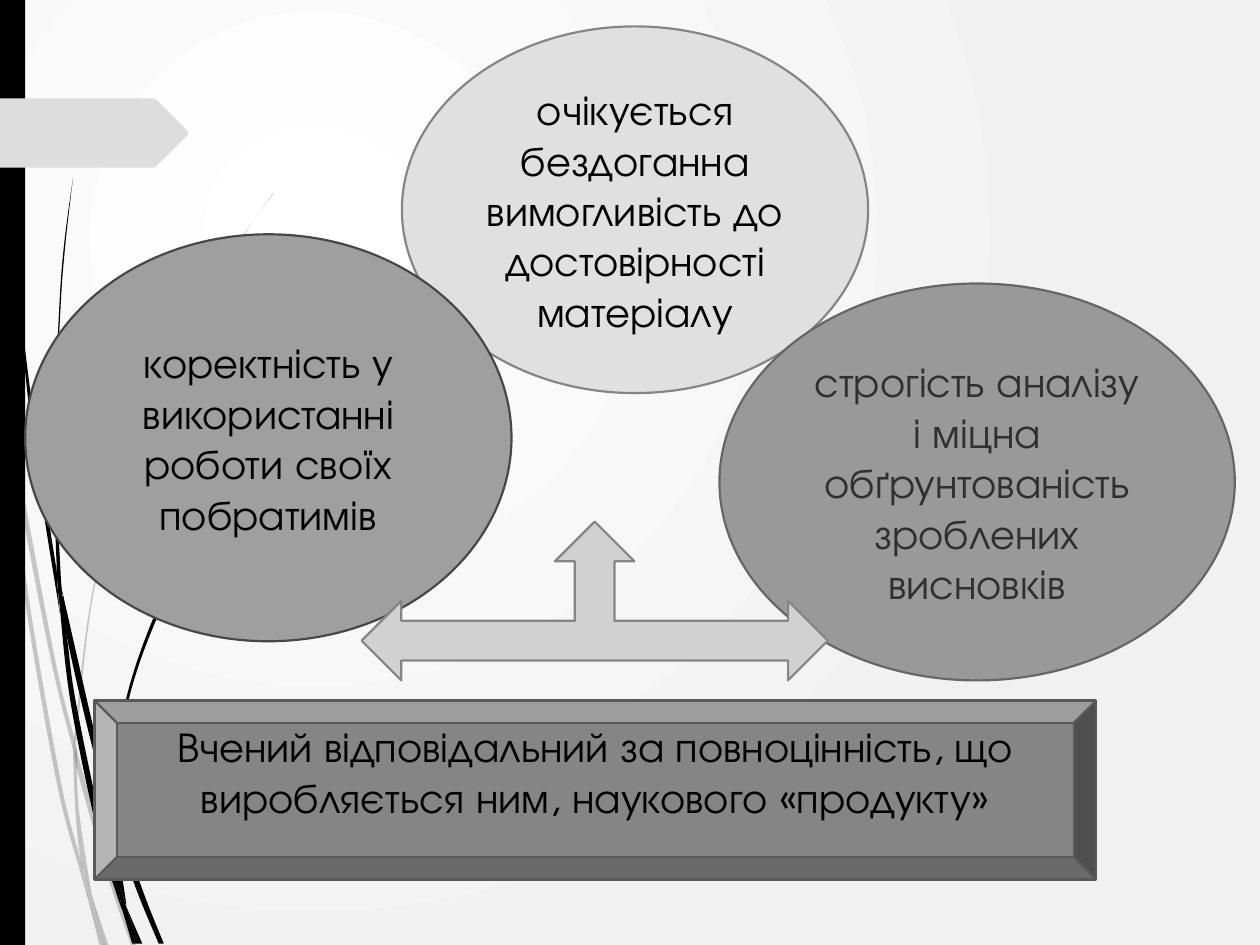
import pptx
import pptx.dml.color
import pptx.enum.shapes
import pptx.enum.text
import pptx.oxml
import pptx.util

Inches = pptx.util.Inches
SHAPES = pptx.enum.shapes.MSO_SHAPE
NS = 'xmlns:a="http://schemas.openxmlformats.org/drawingml/2006/main"'
FONT = "TeX Gyre Adventor"

# Each strand of grass has two edges: one drawn onward, the other back to the start.
PALE_STRANDS = [
    ([(0.08, 3.5), (0.06, 3.22), (0, 2.82)], [(0, 2.99), (0.07, 3.44), (0.08, 3.5)]),
    ([(0.1, 3.45), (0.12, 3.76), (0.4, 5.22), (0.59, 5.99)],
     [(0.59, 5.86), (0.43, 5.2), (0.1, 3.45)]),
    ([(0.61, 5.96), (0.61, 6.1), (0.85, 6.94), (1.04, 7.5)],
     [(1.08, 7.5), (0.88, 6.92), (0.64, 6.07), (0.61, 5.96)]),
    ([(0.73, 7.11), (0.83, 7.5)], [(0.86, 7.5)]),
    ([(0.08, 3.5), (0.19, 4.7), (0.45, 6.21), (0.64, 6.93), (0.7, 7.14)],
     [(0.69, 7.07), (0.64, 6.83), (0.48, 6.19), (0.22, 4.69), (0.12, 3.76), (0.08, 3.5)]),
    ([(0.58, 5.99), (0.6, 6.46), (0.64, 6.83), (0.67, 6.92), (0.73, 7.11)],
     [(0.72, 7.06), (0.63, 6.46), (0.61, 6.1), (0.61, 6.08), (0.58, 5.99)]),
    ([(0.61, 5.96), (0.61, 5.84), (0.76, 4.62), (1.11, 3.49), (1.59, 2.45),
      (1.87, 1.98), (2.01, 1.75), (2.17, 1.54)],
     [(2.17, 1.53), (2.01, 1.75), (1.86, 1.97), (1.58, 2.44), (1.1, 3.48),
      (0.75, 4.61), (0.59, 5.84), (0.59, 5.86)]),
    ([(0.7, 7.14), (0.79, 7.5)], [(0.82, 7.5)]),
    ([(0.58, 5.99), (0.61, 6.08), (0.61, 6.1)], [(0.61, 5.96), (0.59, 5.86)]),
    ([(0.65, 6.83), (0.69, 7.07), (0.7, 7.14), (0.82, 7.5)],
     [(0.83, 7.5), (0.73, 7.11), (0.67, 6.92), (0.65, 6.83)]),
]
DARK_STRANDS = [
    ([(0.02, 0), (0.03, 0.48), (0.05, 1.1), (0.14, 2.33), (0.27, 3.55), (0.46, 4.77), (0.47, 4.81)],
     [(0.45, 4.57), (0.45, 4.53), (0.3, 3.55), (0.15, 2.32), (0.06, 1.09), (0.04, 0.48), (0.03, 0)]),
    ([(0.5, 4.72), (0.53, 5.05), (0.73, 5.92), (0.88, 6.45)],
     [(0.88, 6.33), (0.88, 6.31), (0.77, 5.9), (0.5, 4.72)]),
    ([(0.91, 6.41), (0.91, 6.56), (1.09, 7.08), (1.26, 7.49)],
     [(1.3, 7.49), (1.13, 7.06), (0.94, 6.49), (0.91, 6.41)]),
    ([(0.47, 4.77), (0.56, 5.57), (0.77, 6.59), (0.92, 7.08), (0.97, 7.22)],
     [(0.96, 7.17), (0.91, 6.91), (0.81, 6.57), (0.6, 5.56), (0.53, 5.05), (0.47, 4.77)]),
    ([(0.5, 4.72), (0.48, 4.53), (0.44, 3.49), (0.48, 2.45), (0.52, 1.93), (0.58, 1.41)],
     [(0.58, 1.41), (0.51, 1.93), (0.47, 2.45), (0.43, 3.49), (0.45, 4.49), (0.49, 4.72)]),
    ([(1, 7.19), (1.1, 7.49)], [(1.13, 7.49)]),
    ([(0.45, 4.53), (0.47, 4.77), (0.53, 5.05)], [(0.5, 4.72), (0.49, 4.72), (0.45, 4.49)]),
    ([(0.91, 6.41), (0.91, 6.33), (1.03, 5.52), (1.31, 4.76), (1.69, 4.06),
      (1.91, 3.74), (2.03, 3.59), (2.16, 3.44)],
     [(2.15, 3.44), (2.03, 3.58), (1.91, 3.73), (1.68, 4.05), (1.29, 4.74),
      (1.01, 5.51), (0.88, 6.31)]),
    ([(0.97, 7.22), (1.05, 7.49)], [(1.08, 7.49)]),
    ([(0.88, 6.45), (0.91, 6.91), (0.96, 7.06), (1, 7.19)],
     [(1, 7.16), (0.91, 6.56), (0.9, 6.51), (0.88, 6.45)]),
    ([(0.88, 6.31), (0.88, 6.45), (0.9, 6.51), (0.91, 6.56)], [(0.91, 6.41)]),
    ([(0.91, 6.91), (0.96, 7.17), (0.97, 7.22), (1.08, 7.49)],
     [(1.1, 7.49), (1, 7.19), (0.96, 7.06), (0.91, 6.91)]),
]
TAG = [(0, 0.78), (1.21, 0.78), (1.24, 0.79), (1.49, 1.04), (1.49, 1.07),
       (1.24, 1.32), (1.21, 1.33), (0, 1.33)]

# kind, (left, top, width, height), fill, line, text, text colour
FIGURES = [
    (SHAPES.OVAL, (3.19, 0.21, 3.7, 2.91), "E0E0E0", "858585",
     "очікується бездоганна вимогливість до достовірності матеріалу", "000000"),
    (SHAPES.OVAL, (5.71, 2.25, 4.09, 3.15), "999999", "666666",
     "строгість аналізу і міцна обґрунтованість зроблених висновків", "303030"),
    (SHAPES.OVAL, (0.2, 1.86, 3.86, 3.23), "9F9F9F", "474747",
     "коректність у використанні роботи своїх побратимів", "000000"),
    (SHAPES.LEFT_RIGHT_UP_ARROW, (2.87, 4.14, 3.7, 1.26), "D1D1D1", "858585", "", ""),
    (SHAPES.BEVEL, (0.75, 5.56, 7.95, 1.42), "858585", "595959",
     "Вчений відповідальний за повноцінність, що виробляється ним, наукового «продукту»",
     "000000"),
]


def rgb(value):
    return pptx.dml.color.RGBColor.from_string(value)


def paint(shape, fill, line=None):
    shape.shadow.inherit = False
    shape.fill.solid()
    shape.fill.fore_color.rgb = rgb(fill)
    if line:
        shape.line.color.rgb = rgb(line)
        shape.line.width = pptx.util.Pt(1.25)
    else:
        shape.line.fill.background()


def bezier_points(edge):
    """Two handles and an end point for each stretch of a smooth curve through the edge."""
    padded = [edge[0], *edge, edge[-1]]
    points = []
    for a, b, c, d in zip(padded, padded[1:], padded[2:], padded[3:]):
        points.append(tuple(q + (r - p) / 6 for p, q, r in zip(a, b, c)))
        points.append(tuple(r - (s - q) / 6 for q, r, s in zip(b, c, d)))
        points.append(c)
    return points


def add_outline(shapes, edges, fill):
    """Draw each edge as a smooth curve and join the edges by straight lines."""
    points, curve_starts = [], []
    for edge in edges:
        points.append(edge[0])
        curve_starts += [len(points) - 1 + 3 * i for i in range(len(edge) - 1)]
        points += bezier_points(edge)
    corners = [(Inches(x), Inches(y)) for x, y in points]
    builder = shapes.build_freeform(*corners[0])
    builder.add_line_segments(corners[1:], close=True)
    shape = builder.convert_to_shape()
    lines = shape._element.findall(".//{*}lnTo")
    for start in curve_starts:
        curve = pptx.oxml.parse_xml(f"<a:cubicBezTo {NS}/>")
        lines[start].addprevious(curve)
        for line in lines[start:start + 3]:
            curve.append(line[0])
            line.getparent().remove(line)
    paint(shape, fill)
    return shape


def add_figure(slide, kind, box, fill, line, text, color):
    shape = slide.shapes.add_shape(kind, *map(Inches, box))
    paint(shape, fill, line)
    if not text:
        return
    frame = shape.text_frame
    frame.word_wrap = True
    frame.vertical_anchor = pptx.enum.text.MSO_ANCHOR.MIDDLE
    if kind == SHAPES.BEVEL:
        frame.margin_bottom = Inches(0.35)
    paragraph = frame.paragraphs[0]
    paragraph.alignment = pptx.enum.text.PP_ALIGN.CENTER
    run = paragraph.add_run()
    run.text = text
    run.font.size = pptx.util.Pt(24)
    run.font.name = FONT
    run.font.color.rgb = rgb(color)


def set_background(slide):
    fill = slide.background.fill
    fill.gradient()
    for stop, color, position in zip(fill.gradient_stops, ("FFFFFF", "F1F1F1"), (0, 1)):
        stop.color.rgb = rgb(color)
        stop.position = position
    linear = slide.background._cSld.find(".//{*}gradFill/{*}lin")
    radial = pptx.oxml.parse_xml(
        f'<a:path {NS} path="circle">'
        '<a:fillToRect l="50000" t="50000" r="100000" b="100000"/></a:path>')
    linear.getparent().replace(linear, radial)


def main():
    presentation = pptx.Presentation()
    presentation.slide_width, presentation.slide_height = Inches(10), Inches(7.5)
    slide = presentation.slides.add_slide(presentation.slide_layouts[6])
    set_background(slide)
    for strands, opacity in ((PALE_STRANDS, 20), (DARK_STRANDS, 100)):
        group = slide.shapes.add_group_shape()
        for strand in strands:
            shape = add_outline(group.shapes, strand, "000000")
            if opacity < 100:
                color = shape.fill._xPr.find(".//{*}srgbClr")
                color.append(pptx.oxml.parse_xml(f'<a:alpha {NS} val="{opacity * 1000}"/>'))
    bar = slide.shapes.add_shape(SHAPES.RECTANGLE, 0, 0, Inches(0.2), Inches(7.5))
    paint(bar, "000000")
    add_outline(slide.shapes, [[point] for point in TAG], "DDDDDD")
    for figure in FIGURES:
        add_figure(slide, *figure)
    presentation.save("out.pptx")


if __name__ == "__main__":
    main()
